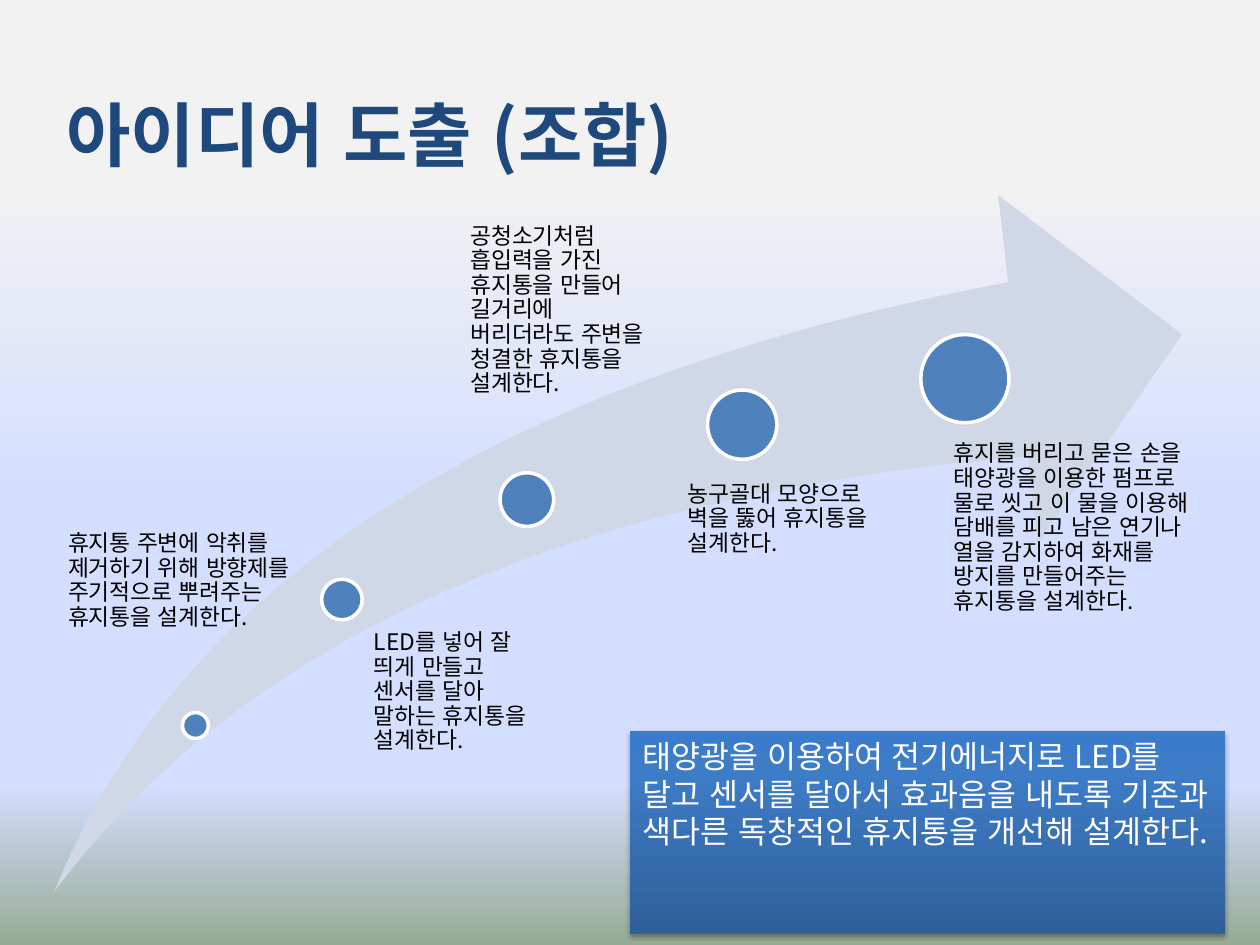
import pptx
import pptx.dml.color
import pptx.enum.shapes
import pptx.enum.text
import pptx.oxml
import pptx.oxml.ns
import pptx.util
from pptx.dml.color import RGBColor
from pptx.util import Pt

FONT = "Noto Sans CJK KR"
NAVY = RGBColor(0x1F, 0x49, 0x7D)
BLUE = RGBColor(0x4F, 0x81, 0xBD)
PALE_BLUE = RGBColor(0xD0, 0xD8, 0xE8)
WHITE = RGBColor(0xFF, 0xFF, 0xFF)
BLACK = RGBColor(0, 0, 0)
BACKGROUND_STOPS = [
    (19, RGBColor(0xF2, 0xF2, 0xF2)),
    (53, RGBColor(0xD4, 0xDE, 0xFF)),
    (83, RGBColor(0xD4, 0xDE, 0xFF)),
    (100, RGBColor(0x96, 0xAB, 0x94)),
]
SUMMARY_STOPS = [
    (0, RGBColor(0x2F, 0x5F, 0x99)),
    (80, RGBColor(0x3D, 0x7C, 0xC7)),
    (100, RGBColor(0x3A, 0x7C, 0xCB)),
]
NAMESPACE = pptx.oxml.ns.nsdecls("a")
qn = pptx.oxml.ns.qn


def set_gradient(fill, element, stops, angle):
    """Give fill, which lies inside element, any number of stops; angle is clockwise."""
    fill.gradient()
    gradient = element.find(".//" + qn("a:gradFill"))
    for child in list(gradient):
        gradient.remove(child)
    stop_xml = "".join(
        f'<a:gs pos="{position * 1000}"><a:srgbClr val="{color}"/></a:gs>'
        for position, color in stops
    )
    gradient.append(pptx.oxml.parse_xml(f"<a:gsLst {NAMESPACE}>{stop_xml}</a:gsLst>"))
    gradient.append(pptx.oxml.parse_xml(
        f'<a:lin {NAMESPACE} ang="{angle * 60000}" scaled="0"/>'))


def write_text(shape, text, size, color, bold=False):
    """Write one left-aligned paragraph at the top of shape and return it."""
    shape.text_frame.word_wrap = True
    shape.text_frame.vertical_anchor = pptx.enum.text.MSO_ANCHOR.TOP
    paragraph = shape.text_frame.paragraphs[0]
    paragraph.alignment = pptx.enum.text.PP_ALIGN.LEFT
    run = paragraph.add_run()
    run.text = text
    run.font.size = Pt(size)
    run.font.bold = bold
    run.font.color.rgb = color
    run.font.name = FONT
    run.font.language_id = pptx.enum.lang.MSO_LANGUAGE_ID.KOREAN
    run.font._element.append(
        pptx.oxml.parse_xml(f'<a:ea {NAMESPACE} typeface="{FONT}"/>'))
    return paragraph


presentation = pptx.Presentation()
presentation.slide_width = Pt(720)
presentation.slide_height = Pt(540)
slide = presentation.slides.add_slide(presentation.slide_layouts[6])
set_gradient(slide.background.fill, slide.element, BACKGROUND_STOPS, 90)

title = slide.shapes.add_textbox(Pt(31), Pt(49), Pt(391), Pt(55.5))
write_text(title, "아이디어 도출 (조합)", 40, NAVY, bold=True)

# Rising arrow
arrow = slide.shapes.add_shape(
    pptx.enum.shapes.MSO_SHAPE.SWOOSH_ARROW, Pt(31), Pt(111.5), Pt(644.5), Pt(398))
arrow.adjustments[0] = 0.25
arrow.adjustments[1] = 0.25
arrow.shadow.inherit = False
arrow.fill.solid()
arrow.fill.fore_color.rgb = PALE_BLUE
arrow.line.fill.background()

# Ideas: circle (left, top, diameter), text box (left, top, width, height), inset, text
ideas = [
    ((104.3, 407.2, 14.8), (31, 304, 142.5, 95), 7.9,
     "휴지통 주변에 악취를 제거하기 위해 방향제를 주기적으로 뿌려주는 휴지통을 설계한다."),
    ((183.8, 331, 23.2), (201.4, 360.5, 106, 107.5), 12.3,
     "LED를 넣어 잘 띄게 만들고 센서를 달아 말하는 휴지통을 설계한다."),
    ((285.8, 270.2, 30.6), (252.4, 128.2, 123.3, 224), 16.4,
     "공청소기처럼 흡입력을 가진 휴지통을 만들어 길거리에 버리더라도 주변을 청결한 휴지통을 설계한다."),
    ((404.3, 222.9, 39.6), (371.8, 275.8, 127.5, 191.5), 21.2,
     "농구골대 모양으로 벽을 뚫어 휴지통을 설계한다."),
    ((526.2, 191.2, 50.4), (518.4, 252.7, 167.8, 177), 26.7,
     "휴지를 버리고 묻은 손을 태양광을 이용한 펌프로 물로 씻고 이 물을 이용해 "
     "담배를 피고 남은 연기나 열을 감지하여 화재를 방지를 만들어주는 휴지통을 설계한다."),
]
for (left, top, diameter), text_place, inset, text in ideas:
    circle = slide.shapes.add_shape(
        pptx.enum.shapes.MSO_SHAPE.OVAL, Pt(left), Pt(top), Pt(diameter), Pt(diameter))
    circle.shadow.inherit = False
    circle.fill.solid()
    circle.fill.fore_color.rgb = BLUE
    circle.line.color.rgb = WHITE
    circle.line.width = Pt(2)

    description = slide.shapes.add_textbox(*map(Pt, text_place))
    frame = description.text_frame
    frame.margin_left = Pt(inset)
    frame.margin_top = frame.margin_right = frame.margin_bottom = 0
    paragraph = write_text(description, text, 13, BLACK)
    paragraph.line_spacing = 0.9

# Summary
summary = slide.shapes.add_shape(
    pptx.enum.shapes.MSO_SHAPE.RECTANGLE, Pt(360), Pt(417.5), Pt(340), Pt(116.5))
set_gradient(summary.fill, summary.element, SUMMARY_STOPS, 270)
summary.line.fill.background()
summary.shadow.inherit = False
summary.element.spPr.find(qn("a:effectLst")).append(pptx.oxml.parse_xml(
    f'<a:outerShdw {NAMESPACE} blurRad="{Pt(3.1)}" dist="{Pt(1.8)}" dir="5400000" '
    f'rotWithShape="0"><a:srgbClr val="{BLACK}"><a:alpha val="35000"/></a:srgbClr>'
    '</a:outerShdw>'))
write_text(
    summary,
    "태양광을 이용하여 전기에너지로 LED를 달고 센서를 달아서 효과음을 내도록 "
    "기존과 색다른 독창적인 휴지통을 개선해 설계한다.",
    18, WHITE)

presentation.save("out.pptx")
